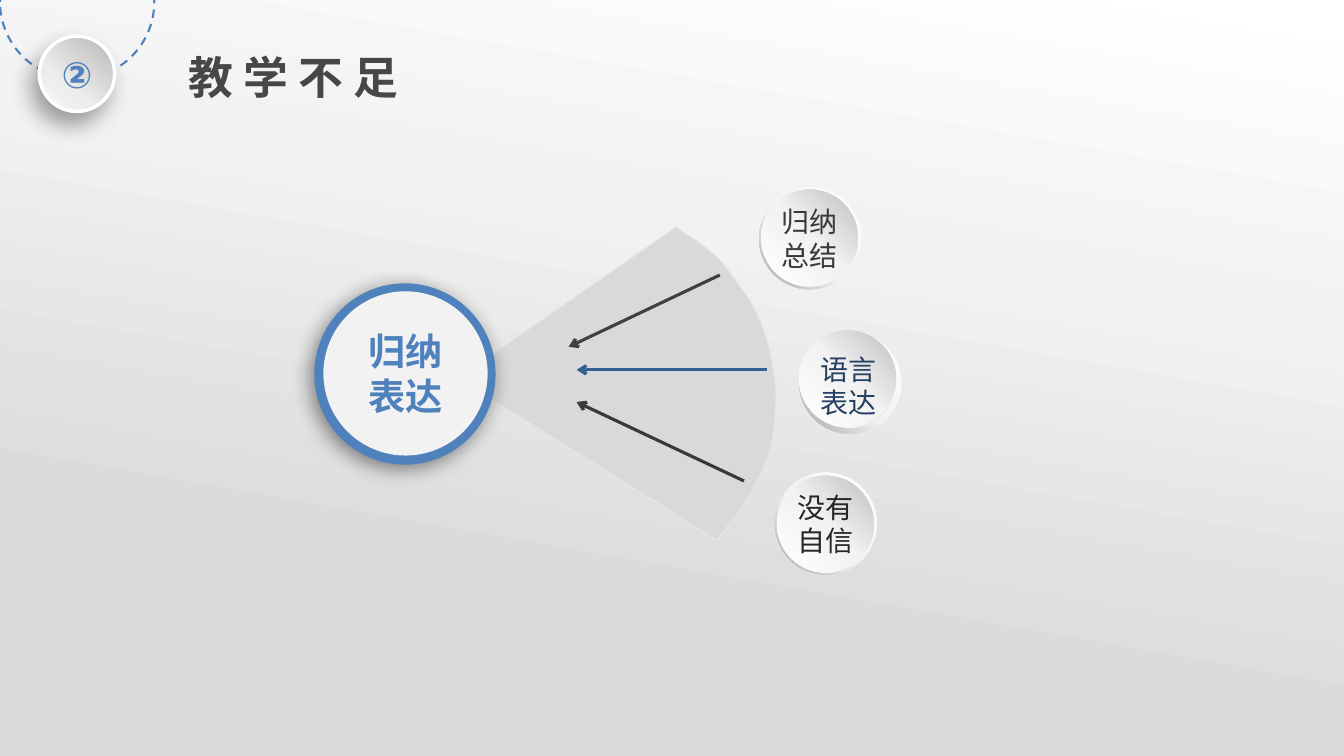
from dataclasses import dataclass

from lxml.etree import SubElement
from pptx import Presentation
from pptx.dml.color import RGBColor
from pptx.enum.dml import MSO_LINE
from pptx.enum.shapes import MSO_CONNECTOR, MSO_SHAPE
from pptx.enum.text import MSO_ANCHOR, MSO_AUTO_SIZE, PP_ALIGN
from pptx.oxml.ns import qn
from pptx.util import Cm, Pt


@dataclass(frozen=True)
class Theme:
    accent: str = "4F81BD"
    face: str = "F2F2F2"
    wedge: str = "D9D9D9"
    wedge_edge: str = "E6E6E6"
    title: str = "474747"
    deep_blue: str = "254061"
    arrow_blue: str = "376092"
    charcoal: str = "3B3838"
    arrow_grey: str = "404040"
    ink: str = "262626"
    backdrop: tuple = ((0, "FFFFFF"), (34, "F2F2F2"), (76, "D9D9D9"))
    badge: tuple = ((9, "BEBEBE"), (63, "ECECEC"), (100, "F7F7F7"))
    ring: tuple = ((0, "FFFFFF"), (55, "F2F2F2"), (100, "A6A6A6"))
    disc: tuple = ((0, "FFFFFF"), (51, "F2F2F2"), (100, "BFBFBF"))
    cjk: str = "Noto Sans CJK SC"
    numeral: str = "Roboto Condensed"
    title_size: float = 32
    hub_size: float = 26.6
    numeral_size: float = 26
    caption_size: float = 20
    leading: float = 1.2


THEME = Theme()


def rgb(color):
    return RGBColor.from_string(color)


def set_gradient(element, fill, stops, angle):
    fill.gradient()
    fill.gradient_angle = 360 - angle
    stop_list = next(element.iter(qn("a:gsLst")))
    for old_stop in list(stop_list):
        stop_list.remove(old_stop)
    for position, color in stops:
        stop = SubElement(stop_list, qn("a:gs"), pos=str(position * 1000))
        SubElement(stop, qn("a:srgbClr"), val=color)


def add_round(shapes, left, top, size, color=None, stops=None, angle=0,
              preset=MSO_SHAPE.OVAL):
    disc = shapes.add_shape(preset, Cm(left), Cm(top), Cm(size), Cm(size))
    disc.shadow.inherit = False
    disc.line.fill.background()
    if stops:
        set_gradient(disc._element, disc.fill, stops, angle)
    elif color:
        disc.fill.solid()
        disc.fill.fore_color.rgb = rgb(color)
    else:
        disc.fill.background()
    return disc


def set_outline(shape, color, width):
    shape.line.color.rgb = rgb(color)
    shape.line.width = Pt(width)


def cast_shadow(shape, color, opacity, blur, distance, direction):
    effects = shape._element.spPr.find(qn("a:effectLst"))
    shadow = SubElement(effects, qn("a:outerShdw"), blurRad=str(Pt(blur)),
                        dist=str(Pt(distance)), dir=str(direction * 60000),
                        algn="ctr", rotWithShape="0")
    tint = SubElement(shadow, qn("a:srgbClr"), val=color)
    SubElement(tint, qn("a:alpha"), val=str(opacity * 1000))


def add_label(shapes, text, box, size, color, font=THEME.cjk, bold=False,
              wrap=True, anchor=MSO_ANCHOR.TOP):
    label = shapes.add_textbox(*map(Cm, box))
    frame = label.text_frame
    frame.text = text
    frame.word_wrap = wrap
    frame.auto_size = MSO_AUTO_SIZE.SHAPE_TO_FIT_TEXT
    frame.vertical_anchor = anchor
    paragraph = frame.paragraphs[0]
    paragraph.alignment = PP_ALIGN.CENTER
    paragraph.line_spacing = Pt(size * THEME.leading)
    run = paragraph.runs[0]
    run.font.name = font
    run.font.size = Pt(size)
    run.font.bold = bold
    run.font.color.rgb = rgb(color)
    SubElement(run._r.get_or_add_rPr(), qn("a:ea"), typeface=font)


def curve_points(start, control_a, control_b, end, steps=16):
    points = []
    for step in range(1, steps + 1):
        t = step / steps
        weights = ((1 - t) ** 3, 3 * t * (1 - t) ** 2, 3 * t ** 2 * (1 - t), t ** 3)
        corners = (start, control_a, control_b, end)
        points.append(tuple(sum(w * corner[axis] for w, corner in zip(weights, corners))
                            for axis in (0, 1)))
    return points


def add_wedge(shapes):
    shoulder, upper, tip = (18.87, 7.52), (17.04, 5.72), (11.53, 9.53)
    lower, bulge = (18.06, 13.61), (19.56, 9.98)
    outline = [
        *curve_points(shoulder, (18.08, 6.45), (18.26, 6.53), upper),
        tip,
        lower,
        *curve_points(lower, (19.66, 11.66), (19.48, 10.97), bulge),
        *curve_points(bulge, (19.51, 9.14), (19.33, 8.26), shoulder),
    ]
    builder = shapes.build_freeform(*map(Cm, shoulder))
    builder.add_line_segments([(Cm(x), Cm(y)) for x, y in outline], close=True)
    wedge = builder.convert_to_shape()
    wedge.shadow.inherit = False
    wedge.fill.solid()
    wedge.fill.fore_color.rgb = rgb(THEME.wedge)
    set_outline(wedge, THEME.wedge_edge, 0.75)


def add_arrow(shapes, start, end, color):
    arrow = shapes.add_connector(MSO_CONNECTOR.STRAIGHT, *map(Cm, start + end))
    set_outline(arrow, color, 2.25)
    SubElement(arrow.line._get_or_add_ln(), qn("a:tailEnd"), type="arrow")
    SubElement(arrow._element.spPr, qn("a:effectLst"))


def add_header(shapes):
    badge_group = shapes.add_group_shape().shapes
    orbit = add_round(badge_group, 0, -1.9, 3.89)
    set_outline(orbit, THEME.accent, 1.5)
    orbit.line.dash_style = MSO_LINE.DASH
    badge = add_round(badge_group, 0.99, 0.91, 1.9, stops=THEME.badge, angle=130)
    set_outline(badge, "FFFFFF", 2.5)
    cast_shadow(badge, "1A1A1A", 40, 16, 10, 120)
    add_label(badge_group, "②", (1.22, 1.19, 1.45, 1.37), THEME.numeral_size,
              THEME.accent, THEME.numeral, bold=True, wrap=False)
    add_label(shapes, "教 学 不 足", (4.34, 1.12, 6.1, 1.63), THEME.title_size,
              THEME.title, bold=True, wrap=False)


def add_factor(shapes, text, ring_at, disc_at, caption_at, color):
    factor = shapes.add_group_shape().shapes
    ring = add_round(factor, *ring_at, 2.57, stops=THEME.ring, angle=135,
                     preset=MSO_SHAPE.DONUT)
    ring.adjustments[0] = 0.05
    add_round(factor, *disc_at, 2.44, stops=THEME.disc, angle=315)
    add_label(factor, text, (*caption_at, 2.08, 1.96), THEME.caption_size, color,
              anchor=MSO_ANCHOR.MIDDLE)


def add_hub(shapes):
    hub = shapes.add_group_shape().shapes
    rim = add_round(hub, 7.92, 7.14, 4.57, THEME.accent)
    cast_shadow(rim, "000000", 45, 15, 4, 135)
    add_round(hub, 8.15, 7.34, 4.14, THEME.face)
    add_label(hub, "归纳表达", (8.74, 8.15, 2.97, 2.54), THEME.hub_size,
              THEME.accent, bold=True)


def main():
    deck = Presentation()
    deck.slide_width, deck.slide_height = Cm(33.87), Cm(19.05)
    slide = deck.slides.add_slide(deck.slide_layouts[6])
    set_gradient(slide._element, slide.background.fill, THEME.backdrop, 100)
    shapes = slide.shapes
    add_header(shapes)
    add_wedge(shapes)
    for start, end, color in (
        ((18.75, 12.12), (14.53, 10.13), THEME.charcoal),
        ((19.33, 9.32), (14.53, 9.32), THEME.arrow_blue),
        ((18.14, 6.93), (14.33, 8.74), THEME.arrow_grey),
    ):
        add_arrow(shapes, start, end, color)
    for factor in (
        ("语言表达", (20.14, 8.36), (20.14, 8.33), (20.35, 8.74), THEME.deep_blue),
        ("归纳总结", (19.13, 4.72), (19.18, 4.78), (19.35, 5.03), THEME.charcoal),
        ("没有自信", (19.53, 11.91), (19.58, 11.99), (19.76, 12.22), THEME.ink),
    ):
        add_factor(shapes, *factor)
    add_hub(shapes)
    deck.save("out.pptx")


if __name__ == "__main__":
    main()
